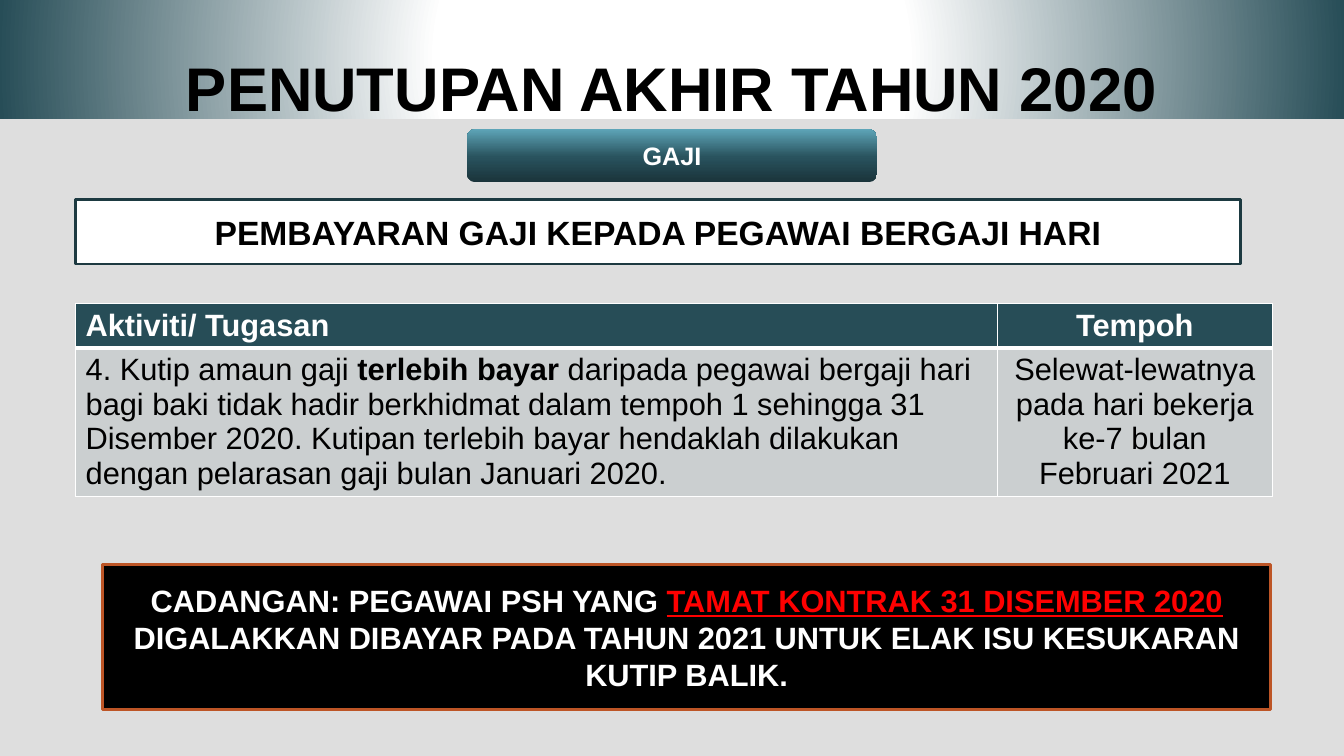
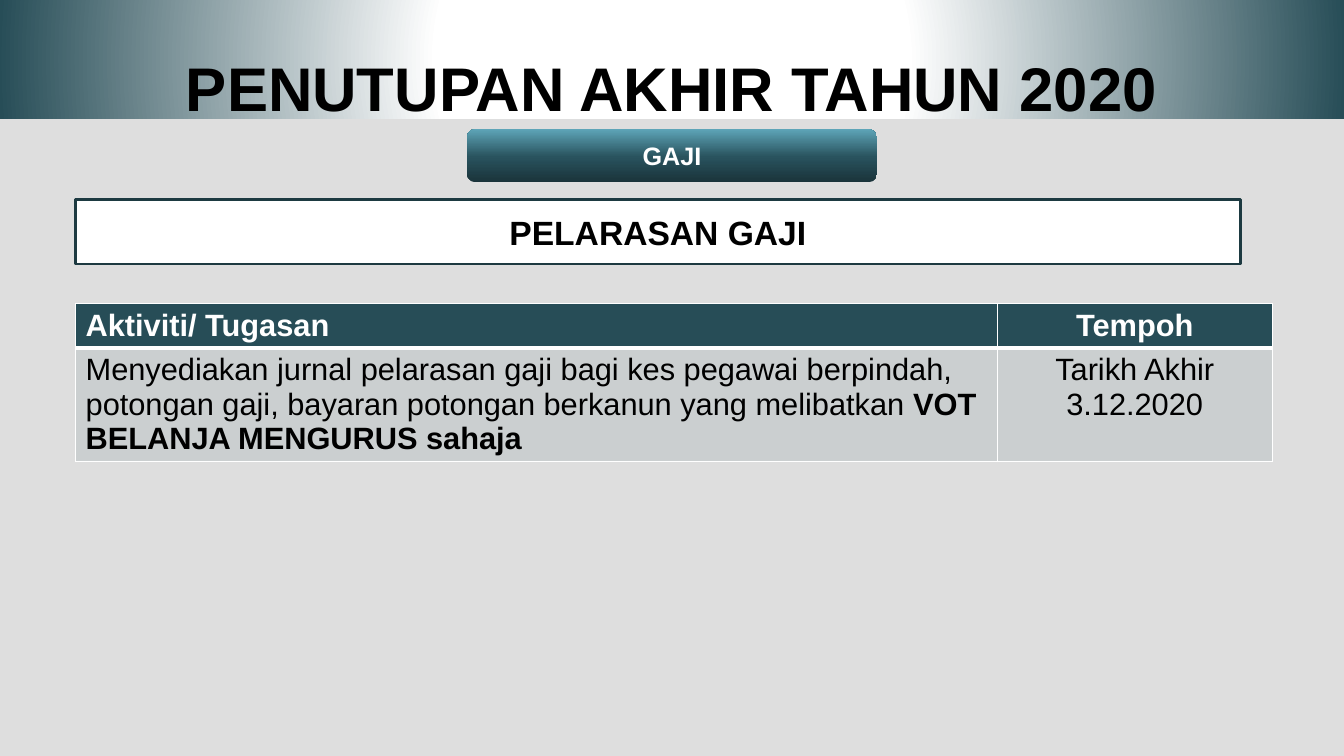
from dataclasses import dataclass

from pptx import Presentation
from pptx import util as u
from pptx.dml.color import RGBColor
from pptx.enum import shapes, text
from pptx.oxml import parse_xml
from pptx.oxml.ns import nsdecls, qn

SHAPE = shapes.MSO_SHAPE
ALIGN = text.PP_ALIGN
ANCHOR = text.MSO_ANCHOR


@dataclass(frozen=True)
class Theme:
    font: str = "Arial"
    page: str = "DEDEDE"
    white: str = "FFFFFF"
    black: str = "000000"
    red: str = "FF0000"
    teal: str = "274D57"
    outline: str = "1D3A41"
    orange: str = "BD5526"
    body_fill: str = "CBCFD0"
    band_stops: tuple = ((0, "FFFFFF"), (35, "FFFFFF"), (100, "274D57"))
    badge_stops: tuple = ((0, "1A333A"), (48, "29535E"), (100, "5EA5B8"))
    title_size: int = 44
    heading_size: int = 24
    body_size: int = 22
    badge_size: int = 18
    line: int = 2
    thin: int = 1
    thick: int = 3


T = Theme()
RADIAL = ('<a:path path="circle">'
          '<a:fillToRect l="50000" t="50000" r="50000" b="50000"/></a:path>')
UPWARD = '<a:lin ang="16200000" scaled="0"/>'


def rgb(value):
    return RGBColor.from_string(value)


def write(tf, runs, size, color, align=ALIGN.CENTER):
    p = tf.paragraphs[0]
    p.alignment = align
    for content, style in runs:
        r = p.add_run()
        r.text = content
        r.font.name = T.font
        r.font.size = u.Pt(size)
        r.font.bold = style.get("bold", False)
        r.font.underline = style.get("underline", False)
        r.font.color.rgb = rgb(style.get("color", color))


def add_box(s, box, kind=SHAPE.RECTANGLE, fill=None, line=None):
    sp = s.shapes.add_shape(kind, *map(u.Inches, box))
    sp.shadow.inherit = False
    if fill:
        sp.fill.solid()
        sp.fill.fore_color.rgb = rgb(fill)
    if line:
        sp.line.color.rgb = rgb(line)
        sp.line.width = u.Pt(T.line)
    else:
        sp.line.fill.background()
    sp.text_frame.word_wrap = True
    sp.text_frame.vertical_anchor = ANCHOR.MIDDLE
    return sp


def set_gradient(sp, stops, direction):
    sp.fill.gradient()
    props = sp._element.spPr
    marks = "".join(f'<a:gs pos="{pos * 1000}"><a:srgbClr val="{color}"/></a:gs>'
                    for pos, color in stops)
    props.replace(props.find(qn("a:gradFill")), parse_xml(
        f'<a:gradFill {nsdecls("a")} rotWithShape="1">'
        f'<a:gsLst>{marks}</a:gsLst>{direction}</a:gradFill>'))


def add_title_band(s, box, title):
    sp = add_box(s, box)
    set_gradient(sp, T.band_stops, RADIAL)
    tf = sp.text_frame
    tf.vertical_anchor = ANCHOR.TOP
    tf.margin_top, tf.margin_bottom = u.Inches(0.5), 0
    write(tf, [(title, {"bold": True})], T.title_size, T.black)


def add_badge(s, box, label):
    sp = add_box(s, box, SHAPE.ROUNDED_RECTANGLE)
    sp.adjustments[0] = 0.17
    set_gradient(sp, T.badge_stops, UPWARD)
    write(sp.text_frame, [(label, {"bold": True})], T.badge_size, T.white)


def add_heading(s, box, heading):
    sp = add_box(s, box, fill=T.white, line=T.outline)
    write(sp.text_frame, [(heading, {"bold": True})], T.heading_size, T.black)


def add_advice(s, box, runs):
    sp = add_box(s, box, fill=T.black, line=T.orange)
    write(sp.text_frame, runs, T.body_size, T.white)


def set_borders(cell, top, bottom):
    props = cell._tc.get_or_add_tcPr()
    for side, width in (("L", T.thin), ("R", T.thin), ("T", top), ("B", bottom)):
        props.append(parse_xml(
            f'<a:ln{side} {nsdecls("a")} w="{u.Pt(width)}"><a:solidFill>'
            f'<a:srgbClr val="{T.white}"/></a:solidFill></a:ln{side}>'))


def add_task_table(s, box, task, period):
    left, top, width, height = box
    header_h, period_w = 0.43, 2.73
    tbl = s.shapes.add_table(2, 2, *map(u.Inches, box)).table
    tbl.columns[0].width = u.Inches(width - period_w)
    tbl.columns[1].width = u.Inches(period_w)
    tbl.rows[0].height = u.Inches(header_h)
    tbl.rows[1].height = u.Inches(height - header_h)
    header = [[("Aktiviti/ Tugasan", {"bold": True})], [("Tempoh", {"bold": True})]]
    rows = ((header, T.teal, T.white, T.thin, T.thick),
            ([task, [(period, {})]], T.body_fill, T.black, T.thick, T.thin))
    for i, (cells, fill, color, upper, lower) in enumerate(rows):
        for j, runs in enumerate(cells):
            cell = tbl.cell(i, j)
            set_borders(cell, upper, lower)
            cell.fill.solid()
            cell.fill.fore_color.rgb = rgb(fill)
            write(cell.text_frame, runs, T.body_size, color,
                  ALIGN.CENTER if j else ALIGN.LEFT)


def add_task_slide(prs, heading, task, period, table_h, advice=None):
    s = prs.slides.add_slide(prs.slide_layouts[6])
    s.background.fill.solid()
    s.background.fill.fore_color.rgb = rgb(T.page)
    add_title_band(s, (0, 0, 13.33, 1.18), "PENUTUPAN AKHIR TAHUN 2020")
    add_badge(s, (4.63, 1.28, 4.07, 0.53), "GAJI")
    add_heading(s, (0.75, 1.98, 11.55, 0.64), heading)
    add_task_table(s, (0.75, 3.01, 11.87, table_h), task, period)
    if advice:
        add_advice(s, (1.02, 5.6, 11.58, 1.44), advice)


def main():
    prs = Presentation()
    prs.slide_width, prs.slide_height = u.Inches(13.33), u.Inches(7.5)
    add_task_slide(
        prs, "PEMBAYARAN GAJI KEPADA PEGAWAI BERGAJI HARI",
        [("4. Kutip amaun gaji ", {}),
         ("terlebih bayar ", {"bold": True}),
         ("daripada pegawai bergaji hari bagi baki tidak hadir berkhidmat dalam "
          "tempoh 1 sehingga 31 Disember 2020. Kutipan terlebih bayar hendaklah "
          "dilakukan dengan pelarasan gaji bulan Januari 2020.", {})],
        "Selewat-lewatnya pada hari bekerja ke-7 bulan Februari 2021", 1.9,
        [("CADANGAN: PEGAWAI PSH YANG ", {"bold": True}),
         ("TAMAT KONTRAK 31 DISEMBER 2020 ",
          {"bold": True, "underline": True, "color": T.red}),
         ("DIGALAKKAN DIBAYAR PADA TAHUN 2021 UNTUK ELAK ISU KESUKARAN KUTIP BALIK.",
          {"bold": True})])
    add_task_slide(
        prs, "PELARASAN GAJI",
        [("Menyediakan jurnal pelarasan gaji bagi kes pegawai berpindah, potongan "
          "gaji, bayaran potongan berkanun yang melibatkan ", {}),
         ("VOT BELANJA MENGURUS sahaja", {"bold": True})],
        "Tarikh Akhir 3.12.2020", 1.56)
    prs.save("out.pptx")


if __name__ == "__main__":
    main()
